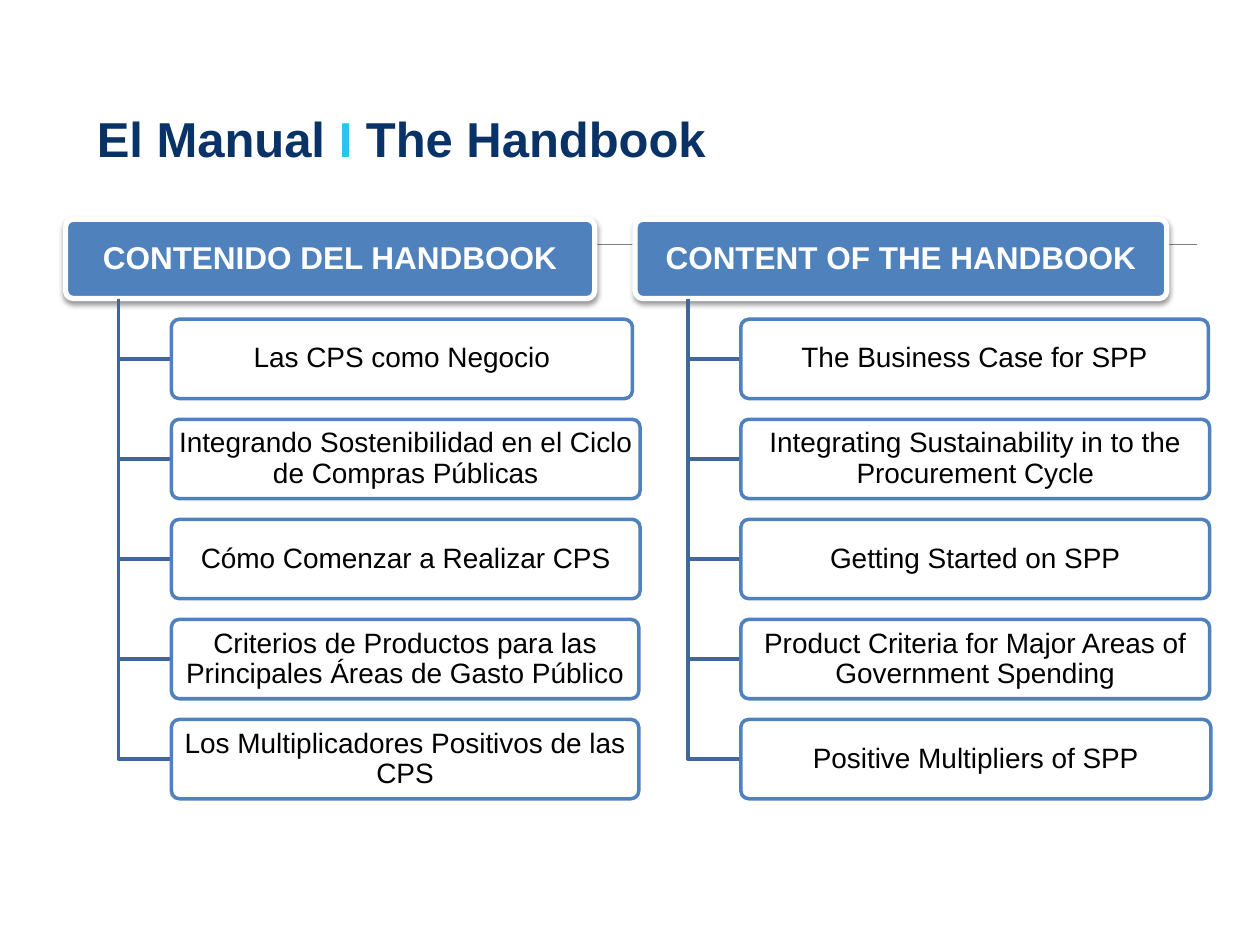
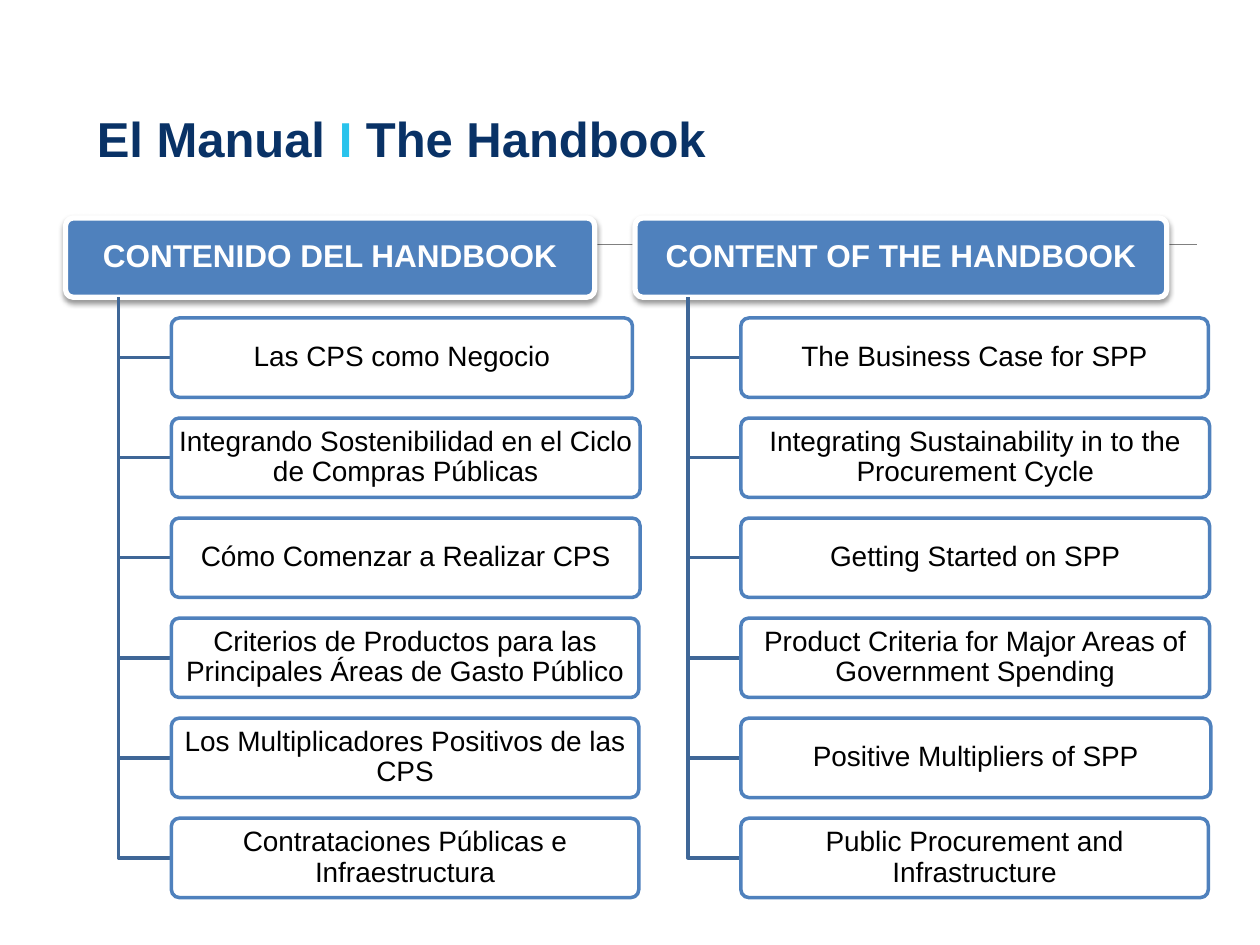
from dataclasses import dataclass

from lxml import etree
from pptx import Presentation
from pptx.dml.color import RGBColor
from pptx.enum.shapes import MSO_CONNECTOR, MSO_SHAPE
from pptx.enum.text import MSO_ANCHOR, PP_ALIGN
from pptx.oxml.ns import qn
from pptx.util import Inches, Pt

STRAIGHT = MSO_CONNECTOR.STRAIGHT
ROUNDED = MSO_SHAPE.ROUNDED_RECTANGLE
MIDDLE = MSO_ANCHOR.MIDDLE
CENTER = PP_ALIGN.CENTER


@dataclass(frozen=True)
class Theme:
    font: str = "Arial"
    navy: str = "093266"
    cyan: str = "29C3EC"
    blue: str = "4F81BD"
    steel: str = "3F6797"
    gray: str = "808080"
    white: str = "FFFFFF"
    black: str = "000000"
    title: int = 28
    head: int = 18
    item: int = 16


THEME = Theme()

BOX_H = 0.63
PITCH = 3.97 / 5      # from one box top to the next
TRUNK = 0.42          # from the head's left edge to the vertical line
INDENT = 2 * TRUNK    # from the head's left edge to the items

# Head text, left, head width, then each item with its box width
COLUMNS = (
    ("CONTENIDO DEL HANDBOOK", 0.52, 4.2, (
        ("Las CPS como Negocio", 3.66),
        ("Integrando Sostenibilidad en el Ciclo de Compras Públicas", 3.72),
        ("Cómo Comenzar a Realizar CPS", 3.72),
        ("Criterios de Productos para las Principales Áreas de Gasto Público", 3.71),
        ("Los Multiplicadores Positivos de las CPS", 3.71),
        ("Contrataciones Públicas e Infraestructura", 3.71),
    )),
    ("CONTENT OF THE HANDBOOK", 5.04, 4.22, (
        ("The Business Case for SPP", 3.71),
        ("Integrating Sustainability in to the Procurement Cycle", 3.72),
        ("Getting Started on SPP", 3.72),
        ("Product Criteria for Major Areas of Government Spending", 3.72),
        ("Positive Multipliers of SPP", 3.73),
        ("Public Procurement and Infrastructure", 3.71),
    )),
)


def color(code):
    return RGBColor.from_string(code)


def style(font, size, code, bold=False):
    font.name = THEME.font
    font.size = Pt(size)
    font.bold = bold
    font.color.rgb = color(code)


def stroke(line, code, width):
    line.color.rgb = color(code)
    line.width = Pt(width)


def alpha(parent, percent):
    """Set the opacity of the colour that parent holds."""
    etree.SubElement(parent[0], qn("a:alpha"), val=str(percent * 1000))


def add_box(slide, text, left, top, width, pads, fill, edge):
    """Draw a rounded box with centred text; edge is colour and points."""
    box = slide.shapes.add_shape(
        ROUNDED, Inches(left), Inches(top), Inches(width), Inches(BOX_H))
    box.adjustments[0] = 0.1
    box.shadow.inherit = False
    box.fill.solid()
    box.fill.fore_color.rgb = color(fill)
    stroke(box.line, *edge)
    frame = box.text_frame
    frame.word_wrap = True
    frame.vertical_anchor = MIDDLE
    frame.margin_left = frame.margin_right = Inches(pads[0])
    frame.margin_top = frame.margin_bottom = Inches(pads[1])
    para = frame.paragraphs[0]
    para.text = text
    para.alignment = CENTER
    para.line_spacing = 0.9
    return box


def add_head(slide, text, left, top, width):
    box = add_box(slide, text, left, top, width, (0.04, 0.03),
                  THEME.blue, (THEME.white, 3))
    style(box.text_frame.paragraphs[0].font, THEME.head, THEME.white, True)
    effects = box._element.spPr.find(qn("a:effectLst"))
    shade = etree.SubElement(
        effects, qn("a:outerShdw"), blurRad=str(Pt(3.1)), dist=str(Pt(1.6)),
        dir="5400000", rotWithShape="0")
    etree.SubElement(shade, qn("a:srgbClr"), val=THEME.black)
    alpha(shade, 38)


def add_item(slide, text, left, top, width):
    box = add_box(slide, text, left, top, width, (0.03, 0.02),
                  THEME.white, (THEME.blue, 2))
    style(box.text_frame.paragraphs[0].font, THEME.item, THEME.black)
    alpha(box._element.spPr.find(qn("a:solidFill")), 90)


def add_elbow(slide, left, top, right, bottom):
    """Draw a line down from the head, then across to an item."""
    path = slide.shapes.build_freeform(Inches(left), Inches(top))
    path.add_line_segments(
        [(Inches(left), Inches(bottom)), (Inches(right), Inches(bottom))],
        close=False)
    elbow = path.convert_to_shape()
    elbow.shadow.inherit = False
    elbow.fill.background()
    stroke(elbow.line, THEME.steel, 2)


def add_column(slide, head, left, top, width, items):
    add_head(slide, head, left, top, width)
    edge = left + INDENT
    for row, (text, size) in enumerate(items, 1):
        y = top + row * PITCH
        add_elbow(slide, left + TRUNK, top + BOX_H, edge, y + BOX_H / 2)
        add_item(slide, text, edge, y, size)


def add_rule(slide):
    rule = slide.shapes.add_connector(
        STRAIGHT, Inches(0.5), Inches(1.94), Inches(9.5), Inches(1.94))
    stroke(rule.line, THEME.gray, 0.75)
    etree.SubElement(rule._element.spPr, qn("a:effectLst"))


def add_title(slide):
    box = slide.shapes.add_textbox(
        Inches(0.67), Inches(0.47), Inches(5.43), Inches(1.25))
    frame = box.text_frame
    frame.word_wrap = True
    frame.vertical_anchor = MIDDLE
    para = frame.paragraphs[0]
    for text, code in (("El Manual ", THEME.navy), ("I", THEME.cyan),
                       (" The Handbook", THEME.navy)):
        run = para.add_run()
        run.text = text
        style(run.font, THEME.title, code, True)


def add_tree(deck, top, count):
    """Add a slide that lists the first count items of each column."""
    slide = deck.slides.add_slide(deck.slide_layouts[6])
    add_rule(slide)
    for head, left, width, items in COLUMNS:
        add_column(slide, head, left, top, width, items[:count])
    add_title(slide)


def main():
    deck = Presentation()
    deck.slide_width = Inches(10)
    deck.slide_height = Inches(7.5)
    add_tree(deck, 1.74, 5)
    add_tree(deck, 1.73, 6)
    deck.save("out.pptx")


if __name__ == "__main__":
    main()
